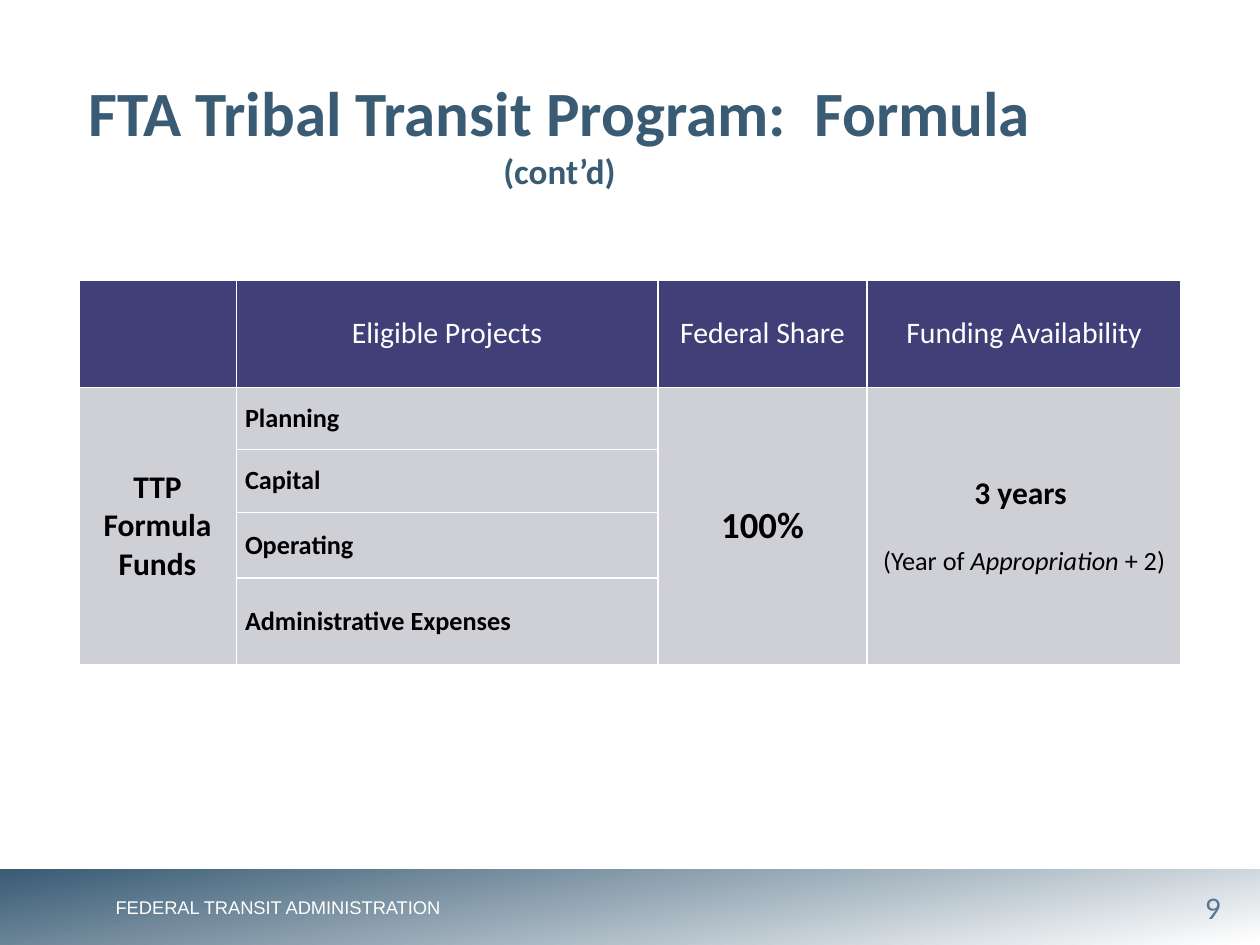
from lxml import etree
from pptx import Presentation
from pptx.dml.color import RGBColor
from pptx.enum import shapes, text
from pptx.oxml import ns
from pptx.util import Pt

SLATE = RGBColor(0x39, 0x5B, 0x74)
PAGE_BLUE = RGBColor(0x57, 0x77, 0x95)
HEADER = RGBColor(0x41, 0x3F, 0x77)
BODY = RGBColor(0xCF, 0xCF, 0xD6)
WHITE = RGBColor(0xFF, 0xFF, 0xFF)
BLACK = RGBColor(0, 0, 0)
CENTER, LEFT = text.PP_ALIGN.CENTER, text.PP_ALIGN.LEFT


def write(frame, paragraphs, align, color, font="Calibri"):
    """Each paragraph is a list of (words, format values) runs."""
    for i, runs in enumerate(paragraphs):
        line = frame.paragraphs[0] if i == 0 else frame.add_paragraph()
        line.alignment = align
        for words, values in runs:
            run = line.add_run()
            run.text = words
            run.font.color.rgb = color
            for key, value in {"name": font, **values}.items():
                setattr(run.font, key, value)


def add_white_borders(cell):
    props = cell._tc.get_or_add_tcPr()
    for side in ("lnL", "lnR", "lnT", "lnB"):
        line = etree.SubElement(props, ns.qn(f"a:{side}"), w=str(Pt(1)))
        fill = etree.SubElement(line, ns.qn("a:solidFill"))
        etree.SubElement(fill, ns.qn("a:srgbClr"), val=str(WHITE))


prs = Presentation()
prs.slide_width, prs.slide_height = Pt(720), Pt(540)
slide = prs.slides.add_slide(prs.slide_layouts[6])

# Footer band, fading from slate to white
band = slide.shapes.add_shape(shapes.MSO_SHAPE.RECTANGLE, Pt(0), Pt(496.8), Pt(720), Pt(43.2))
band.shadow.inherit = False
band.line.fill.background()
band.fill.gradient()
band.fill.gradient_angle = 280
for stop, color, position in zip(band.fill.gradient_stops, (SLATE, WHITE), (0, 0.99)):
    stop.color.rgb = color
    stop.position = position

# Page number, agency and title
big, small = {"size": Pt(36), "bold": True}, {"size": Pt(20), "bold": True}
title_runs = [("FTA Tribal Transit Program:  Formula ", big), ("(cont’d)", small)]
texts = [
    ((666, 504.7, 54, 27.4), [("9", {"size": Pt(18)})], CENTER, PAGE_BLUE, "Calibri", True),
    ((59, 508.3, 205.2, 20.2), [("FEDERAL TRANSIT ADMINISTRATION", {"size": Pt(10.5)})],
     LEFT, WHITE, "Arial", False),
    ((36, 39.6, 567.4, 72), title_runs, CENTER, SLATE, "Calibri", True),
]
for place, runs, align, color, font, wrap in texts:
    frame = slide.shapes.add_textbox(*map(Pt, place)).text_frame
    frame.word_wrap = wrap
    frame.vertical_anchor = text.MSO_ANCHOR.MIDDLE
    write(frame, [runs], align, color, font)

# Funding table
widths = [90, 241, 119.5, 179.5]
heights = [61.5, 35.3, 36, 37.4, 49.7]
table = slide.shapes.add_table(len(heights), len(widths), Pt(45), Pt(160), Pt(sum(widths)),
                               Pt(sum(heights))).table
for column, width in zip(table.columns, widths):
    column.width = Pt(width)
for row, height in zip(table.rows, heights):
    row.height = Pt(height)
for r in range(len(heights)):
    for c in range(len(widths)):
        cell = table.cell(r, c)
        add_white_borders(cell)
        cell.fill.solid()
        cell.fill.fore_color.rgb = HEADER if r == 0 else BODY
        cell.vertical_anchor = text.MSO_ANCHOR.MIDDLE
        for side, inset in {"left": 5, "right": 5, "top": 2.7, "bottom": 2.7}.items():
            setattr(cell, f"margin_{side}", Pt(inset))

# Header row
for c, heading in enumerate(["Eligible Projects", "Federal Share", "Funding Availability"], 1):
    write(table.cell(0, c).text_frame, [[(heading, {"size": Pt(17), "bold": False})]],
          CENTER, WHITE)

# Eligible projects
for r, project in enumerate(["Planning", "Capital", "Operating", "Administrative Expenses"], 1):
    write(table.cell(r, 1).text_frame, [[(project, {"size": Pt(15), "bold": True})]], LEFT, BLACK)

# Columns that span all projects
strong = {"size": Pt(18), "bold": True}
plain = {"size": Pt(15), "bold": False}
spanning = {
    0: [[("TTP", strong)], [("Formula Funds", strong)]],
    2: [[("100%", {"size": Pt(21), "bold": True})]],
    3: [[("3 years ", strong)],
        [("(Year of ", plain), ("Appropriation ", {**plain, "italic": True}), ("+ 2)", plain)]],
}
for c, paragraphs in spanning.items():
    table.cell(1, c).merge(table.cell(4, c))
    write(table.cell(1, c).text_frame, paragraphs, CENTER, BLACK)
table.cell(1, 3).text_frame.paragraphs[1].space_before = Pt(18.3)

prs.save("out.pptx")
